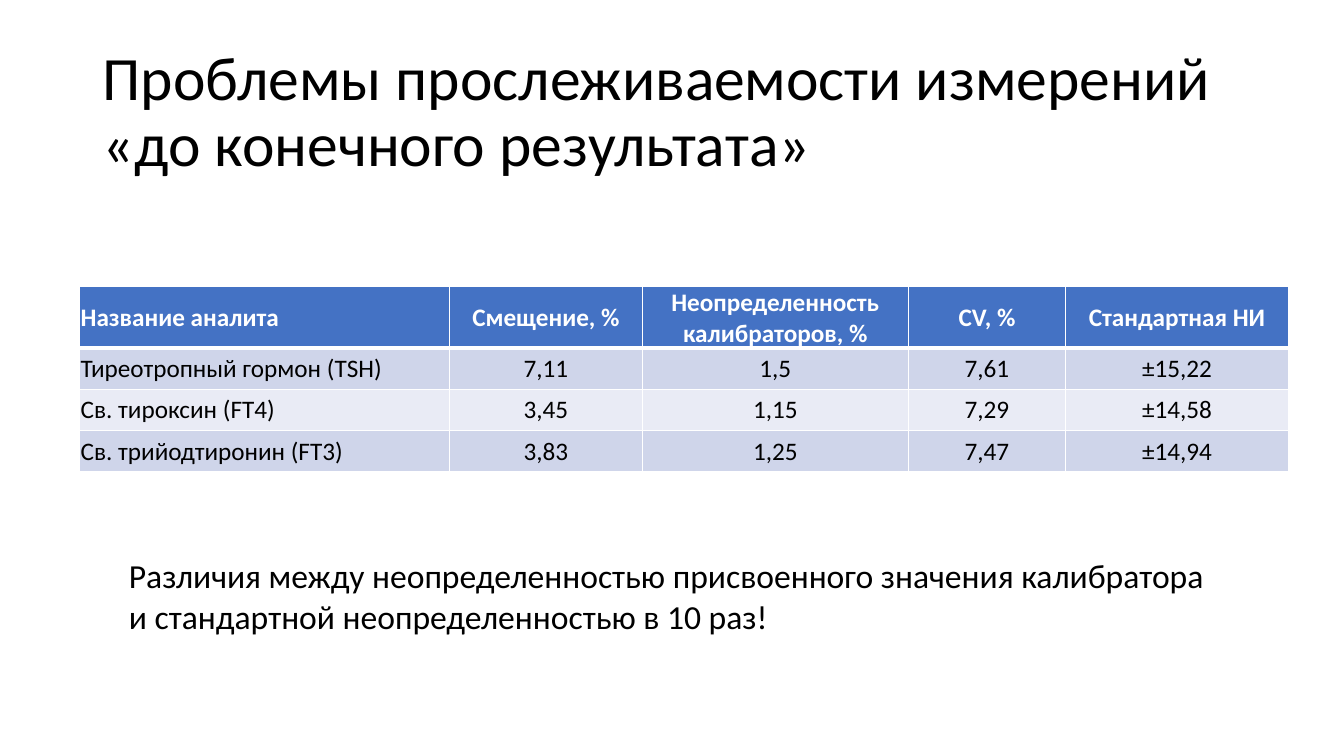
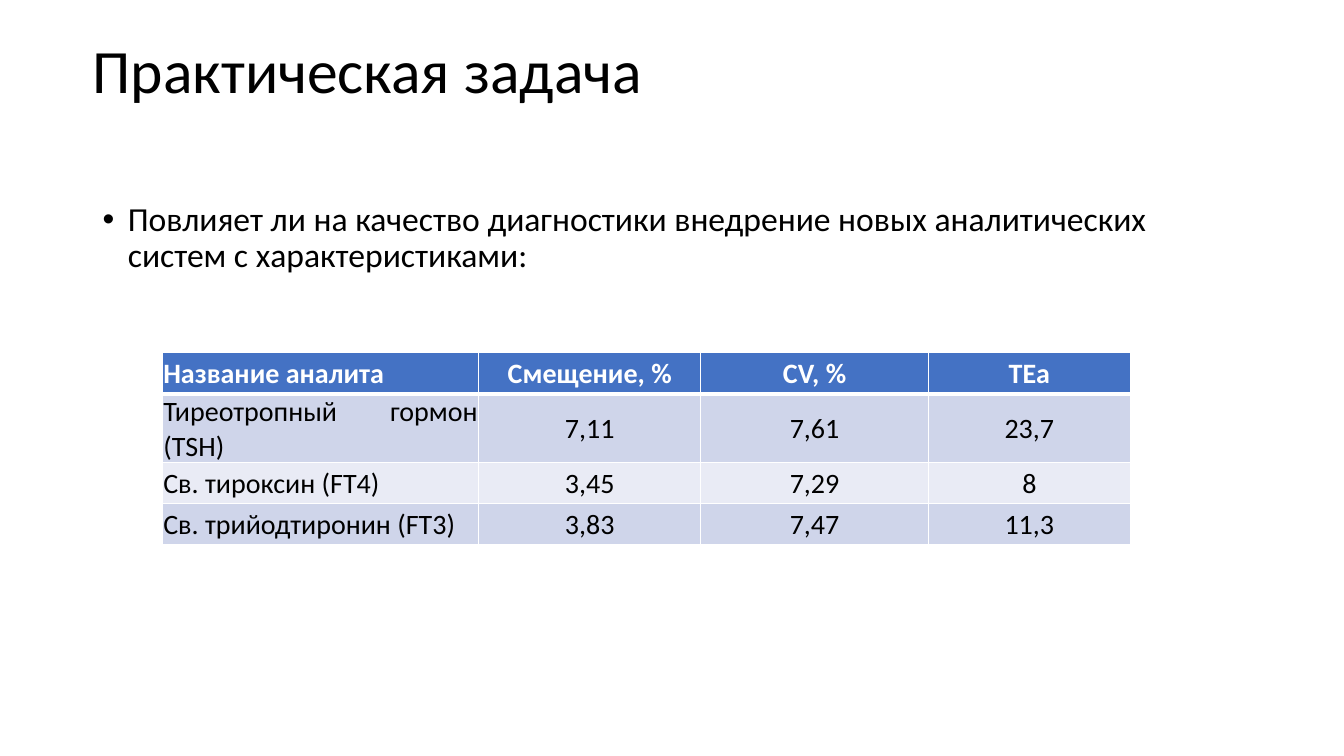
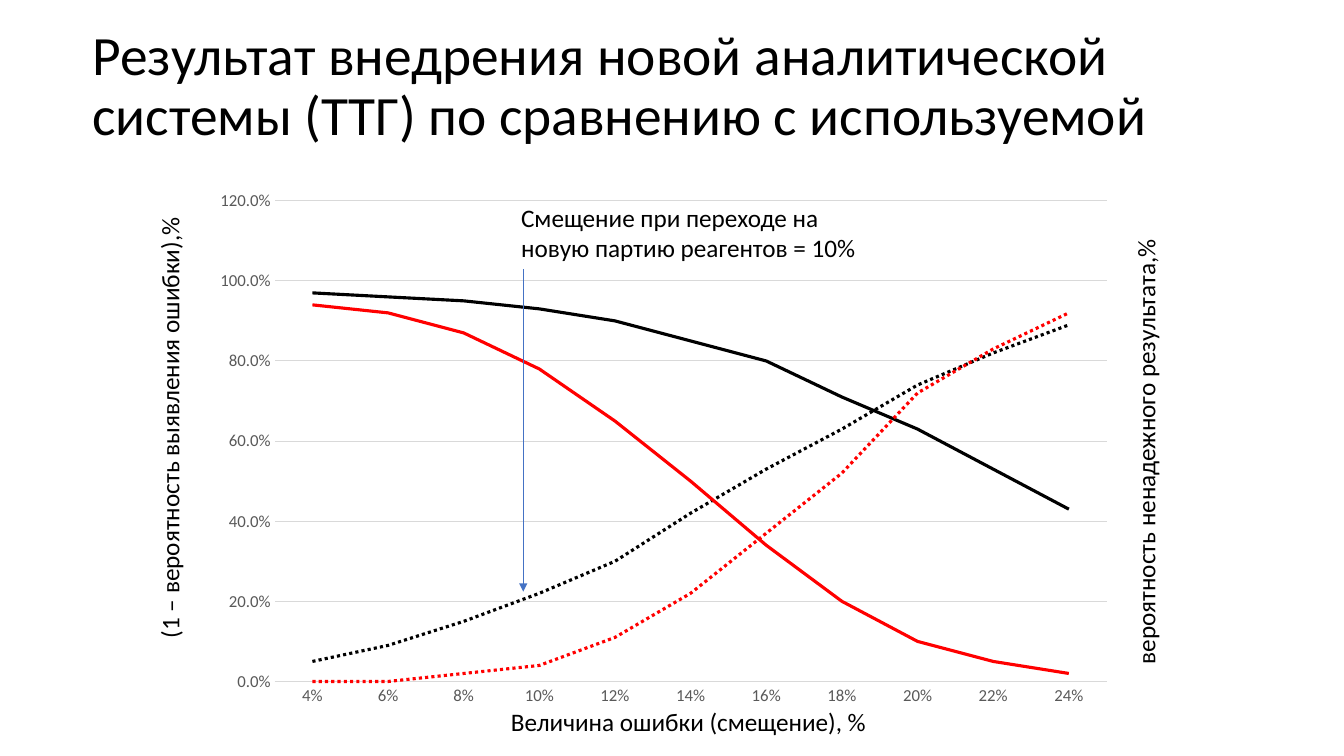
from lxml.etree import SubElement
from pptx import Presentation
from pptx.chart.data import CategoryChartData
from pptx.dml.color import RGBColor
from pptx.enum.chart import XL_CHART_TYPE, XL_MARKER_STYLE, XL_TICK_MARK
from pptx.enum.dml import MSO_LINE
from pptx.enum.shapes import MSO_CONNECTOR
from pptx.enum.text import MSO_ANCHOR, MSO_AUTO_SIZE, PP_ALIGN
from pptx.oxml import parse_xml
from pptx.oxml.ns import nsdecls, qn
from pptx.util import Inches, Pt

FONT = "Calibri"
COLORS = {
    "text": "000000",
    "white": "FFFFFF",
    "accent": "4472C4",
    "odd_row": "CFD5EA",
    "even_row": "E9EBF5",
    "tick": "595959",
    "grid": "D9D9D9",
    "new_system": "FF0000",
}

TRACEABILITY = {
    "title": "Проблемы прослеживаемости измерений «до конечного результата»",
    "columns": [3.67, 1.91, 2.64, 1.56, 2.21],
    "rows": [
        ("Название аналита", "Смещение, %", "Неопределенность калибраторов, %", "CV, %", "Стандартная НИ"),
        ("Тиреотропный гормон (ТSH)", "7,11", "1,5", "7,61", "±15,22"),
        ("Св. тироксин (FT4)", "3,45", "1,15", "7,29", "±14,58"),
        ("Св. трийодтиронин (FT3)", "3,83", "1,25", "7,47", "±14,94"),
    ],
    "conclusion": "Различия между неопределенностью присвоенного значения калибратора "
                  "и стандартной неопределенностью в 10 раз!",
}
TASK = {
    "title": "Практическая задача",
    "question": "Повлияет ли на качество диагностики внедрение новых аналитических "
                "систем с характеристиками:",
    "columns": [3.14, 2.2, 2.26, 2],
    "rows": [
        ("Название аналита", "Смещение, %", "CV, %", "ТЕа"),
        ("Тиреотропный гормон (ТSH)", "7,11", "7,61", "23,7"),
        ("Св. тироксин (FT4)", "3,45", "7,29", "8"),
        ("Св. трийодтиронин (FT3)", "3,83", "7,47", "11,3"),
    ],
}
RESULT = {
    "title": "Результат внедрения новой аналитической системы (ТТГ) по сравнению с используемой",
    "biases": [f"{bias}%" for bias in range(4, 25, 2)],
    "curves": [
        ("Series 1", "text", MSO_LINE.SOLID, (0.97, 0.96, 0.95, 0.93, 0.9, 0.85, 0.8, 0.71, 0.63, 0.53, 0.43)),
        ("Series 2", "text", MSO_LINE.ROUND_DOT, (0.05, 0.09, 0.15, 0.22, 0.3, 0.42, 0.53, 0.63, 0.74, 0.82, 0.89)),
        ("Series 3", "new_system", MSO_LINE.SOLID, (0.94, 0.92, 0.87, 0.78, 0.65, 0.5, 0.34, 0.2, 0.1, 0.05, 0.02)),
        ("Series 4", "new_system", MSO_LINE.ROUND_DOT, (0, 0, 0.02, 0.04, 0.11, 0.22, 0.37, 0.52, 0.72, 0.83, 0.92)),
    ],
    "labels": [
        ("Смещение при переходе на\vновую партию реагентов = 10%", (5.07, 1.96, 3.56, 0.71), None),
        ("(1 – вероятность выявления ошибки),%", (1.48, 2.11, 0.5, 4.32), "vert270"),
        ("вероятность ненадежного результата,%", (11.16, 2.32, 0.5, 4.37), "vert270"),
        ("Величина ошибки (смещение), %", (4.97, 6.96, 3.77, 0.4), None),
    ],
}


def color(name):
    return RGBColor.from_string(COLORS[name])


def write(frame, text, size=18, ink="text", bold=False, align=None, anchor=None, spacing=None):
    if anchor is not None:
        frame.vertical_anchor = anchor
    paragraph = frame.paragraphs[0]
    paragraph.text = text
    paragraph.alignment = align
    paragraph.line_spacing = spacing
    for run in paragraph.runs:
        run.font.name = FONT
        run.font.size = Pt(size)
        run.font.bold = bold
        run.font.color.rgb = color(ink)
    return paragraph


def add_text(slide, text, place, wrap=True, vert=None, **style):
    frame = slide.shapes.add_textbox(*map(Inches, place)).text_frame
    frame.word_wrap = wrap
    if not wrap:
        frame.auto_size = MSO_AUTO_SIZE.SHAPE_TO_FIT_TEXT
    if vert:
        frame._txBody.bodyPr.set("vert", vert)
    return write(frame, text, **style)


def add_slide(deck, title, left, top, size=44):
    slide = deck.slides.add_slide(deck.slide_layouts[6])
    add_text(slide, title, (left, top, 11.5, 1.45), size=size, anchor=MSO_ANCHOR.MIDDLE, spacing=0.9)
    return slide


def add_borders(cell, header_bottom, header_top):
    widths = {"L": 1, "R": 1, "T": 3 if header_top else 1, "B": 3 if header_bottom else 1}
    for side, width in widths.items():
        cell._tc.get_or_add_tcPr().append(parse_xml(
            f'<a:ln{side} {nsdecls("a")} w="{Pt(width)}"><a:solidFill>'
            f'<a:srgbClr val="{COLORS["white"]}"/></a:solidFill></a:ln{side}>'))


def add_analytes(slide, content, left, top, size, row_height=0.41):
    rows, columns = content["rows"], content["columns"]
    table = slide.shapes.add_table(
        len(rows), len(columns), Inches(left), Inches(top),
        Inches(sum(columns)), Inches(row_height * len(rows))).table
    for column, width in zip(table.columns, columns):
        column.width = Inches(width)
    for r, row in enumerate(rows):
        header = r == 0
        fill = "accent" if header else "odd_row" if r % 2 else "even_row"
        for c, text in enumerate(row):
            cell = table.cell(r, c)
            cell.margin_left = cell.margin_right = cell.margin_top = Inches(0.01)
            cell.margin_bottom = 0
            cell.vertical_anchor = MSO_ANCHOR.MIDDLE
            add_borders(cell, header, r == 1)
            cell.fill.solid()
            cell.fill.fore_color.rgb = color(fill)
            write(cell.text_frame, text, size=size, bold=header,
                  ink="white" if header else "text",
                  align=PP_ALIGN.CENTER if c else PP_ALIGN.JUSTIFY)


def add_bullet(paragraph):
    properties = paragraph._p.get_or_add_pPr()
    properties.set("marL", str(Inches(0.25)))
    properties.set("indent", str(-Inches(0.25)))
    SubElement(properties, qn("a:buFont")).set("typeface", "Arial")
    SubElement(properties, qn("a:buChar")).set("char", "•")


def style_axis(axis):
    axis.major_tick_mark = axis.minor_tick_mark = XL_TICK_MARK.NONE
    axis.tick_labels.font.name = FONT
    axis.tick_labels.font.size = Pt(12)
    axis.tick_labels.font.color.rgb = color("tick")


def style_rule(line):
    line.color.rgb = color("grid")
    line.width = Pt(0.75)


def add_error_chart(slide, biases, curves):
    data = CategoryChartData(number_format="0.0%")
    data.categories = biases
    for name, _, _, values in curves:
        data.add_series(name, values)
    chart = slide.shapes.add_chart(
        XL_CHART_TYPE.LINE, *map(Inches, (1.99, 1.78, 9.17, 5.3)), data).chart
    chart.has_legend = chart.has_title = False
    chart.font.name = FONT
    chart.font.size = Pt(10)
    chart.font.color.rgb = color("text")
    chart.plots[0].vary_by_categories = False
    for series, (_, ink, dash, _) in zip(chart.plots[0].series, curves):
        series.smooth = False
        series.marker.style = XL_MARKER_STYLE.NONE
        series.format.line.color.rgb = color(ink)
        series.format.line.width = Pt(2.25)
        series.format.line.dash_style = dash
    bias_axis, share_axis = chart.category_axis, chart.value_axis
    style_axis(bias_axis)
    style_rule(bias_axis.format.line)
    style_axis(share_axis)
    share_axis.format.line.fill.background()
    share_axis.minimum_scale, share_axis.maximum_scale, share_axis.major_unit = 0, 1.2, 0.2
    share_axis.tick_labels.number_format = "0.0%"
    share_axis.tick_labels.number_format_is_linked = False
    style_rule(share_axis.major_gridlines.format.line)
    plot_area = chart._chartSpace.chart.plotArea
    for layout in plot_area.findall(qn("c:layout")):
        plot_area.remove(layout)
    sizes = "".join(f'<c:{key} val="{value}"/>' for key, value in
                    (("x", 0.08), ("y", 0.04), ("w", 0.9), ("h", 0.9)))
    plot_area.insert(0, parse_xml(
        f'<c:layout {nsdecls("c")}><c:manualLayout><c:layoutTarget val="inner"/>'
        f'<c:xMode val="edge"/><c:yMode val="edge"/>{sizes}</c:manualLayout></c:layout>'))


def add_arrow(slide, start, end):
    arrow = slide.shapes.add_connector(MSO_CONNECTOR.STRAIGHT, *map(Inches, start + end))
    arrow.line.color.rgb = color("accent")
    arrow.line.width = Pt(0.5)
    SubElement(arrow.line._get_or_add_ln(), qn("a:tailEnd")).set("type", "triangle")
    SubElement(arrow._element.spPr, qn("a:effectLst"))


def main():
    deck = Presentation()
    deck.slide_width, deck.slide_height = Inches(13.33), Inches(7.5)

    traceability = add_slide(deck, TRACEABILITY["title"], 0.92, 0.4)
    add_analytes(traceability, TRACEABILITY, 0.79, 2.84, 18)
    add_text(traceability, TRACEABILITY["conclusion"], (1.18, 5.46, 10.97, 0.91), size=24)

    task = add_slide(deck, TASK["title"], 0.82, 0)
    question = add_text(task, TASK["question"], (0.92, 1.96, 11.5, 1.04), size=24, spacing=0.9)
    question.space_before = Pt(10)
    add_bullet(question)
    add_analytes(task, TASK, 1.61, 3.5, 20)

    result = add_slide(deck, RESULT["title"], 0.82, 0.14, size=39.6)
    add_error_chart(result, RESULT["biases"], RESULT["curves"])
    add_arrow(result, (5.19, 2.67), (5.19, 5.87))
    for text, place, vert in RESULT["labels"]:
        add_text(result, text, place, wrap=False, vert=vert)

    deck.save("out.pptx")


if __name__ == "__main__":
    main()
